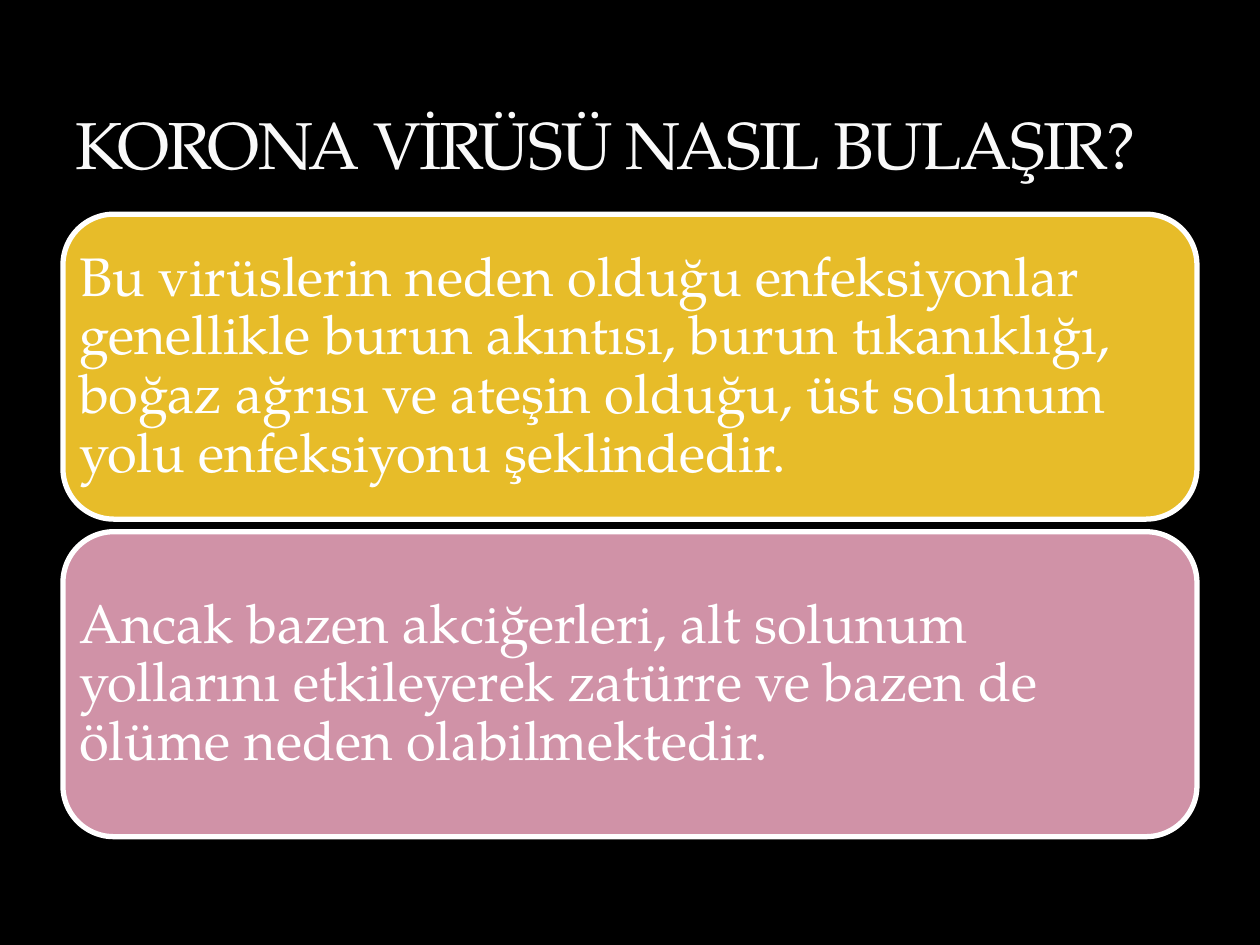
"""Build a slide with a title and two stacked cards on how the virus spreads."""
from dataclasses import dataclass

from pptx import Presentation
from pptx.dml.color import RGBColor
from pptx.enum.shapes import MSO_SHAPE
from pptx.enum.text import MSO_ANCHOR, PP_ALIGN
from pptx.util import Inches, Pt

ROUND = MSO_SHAPE.ROUNDED_RECTANGLE
MID, LOW = MSO_ANCHOR.MIDDLE, MSO_ANCHOR.BOTTOM
LEFT = PP_ALIGN.LEFT
FONT = "TeX Gyre Pagella"
HUES = {"back": "000000", "gold": "E7BC29", "rose": "D092A7",
        "white": "FFFFFF", "title": "F9F9F9"}
WIDE, HIGH = 10, 7.5
EDGE, SPAN = 0.05 * WIDE, 0.9 * WIDE
TOP, TALL, STEP = 1.7, 2.42, 2.52


@dataclass
class Card:
    text: str
    hue: str


CARDS = [
    Card("Bu virüslerin neden olduğu enfeksiyonlar genellikle burun akıntısı, "
         "burun tıkanıklığı, boğaz ağrısı ve ateşin olduğu, üst solunum yolu "
         "enfeksiyonu şeklindedir.", "gold"),
    Card("Ancak bazen akciğerleri, alt solunum yollarını etkileyerek zatürre "
         "ve bazen de ölüme neden olabilmektedir.", "rose"),
]


def tint(name: str) -> RGBColor:
    return RGBColor.from_string(HUES[name])


def write(shape, text: str, size: float, hue: str, anchor):
    frame = shape.text_frame
    frame.word_wrap = True
    frame.vertical_anchor = anchor
    para = frame.paragraphs[0]
    para.alignment = LEFT
    run = para.add_run()
    run.text = text
    run.font.name = FONT
    run.font.size = Pt(size)
    run.font.color.rgb = tint(hue)
    return para


def draw_title(slide, text: str) -> None:
    box = slide.shapes.add_textbox(
        Inches(EDGE), Inches(0.17), Inches(SPAN), Inches(1.33))
    para = write(box, text, 37.8, "title", LOW)
    para.runs[0].font._element.set("spc", "-100")


def draw_card(slide, card: Card, row: int) -> None:
    shape = slide.shapes.add_shape(
        ROUND, Inches(EDGE), Inches(TOP + row * STEP),
        Inches(SPAN), Inches(TALL))
    shape.shadow.inherit = False
    shape.fill.solid()
    shape.fill.fore_color.rgb = tint(card.hue)
    shape.line.color.rgb = tint("white")
    shape.line.width = Pt(3)
    frame = shape.text_frame
    frame.margin_left = frame.margin_right = Inches(0.01)
    frame.margin_top = frame.margin_bottom = Inches(0.01)
    write(shape, card.text, 31, "white", MID).line_spacing = 0.9


def main() -> None:
    deck = Presentation()
    deck.slide_width, deck.slide_height = Inches(WIDE), Inches(HIGH)
    slide = deck.slides.add_slide(deck.slide_layouts[6])
    slide.background.fill.solid()
    slide.background.fill.fore_color.rgb = tint("back")
    for row, card in enumerate(CARDS):
        draw_card(slide, card, row)
    draw_title(slide, "KORONA VİRÜSÜ NASIL BULAŞIR?")
    deck.save("out.pptx")


if __name__ == "__main__":
    main()
